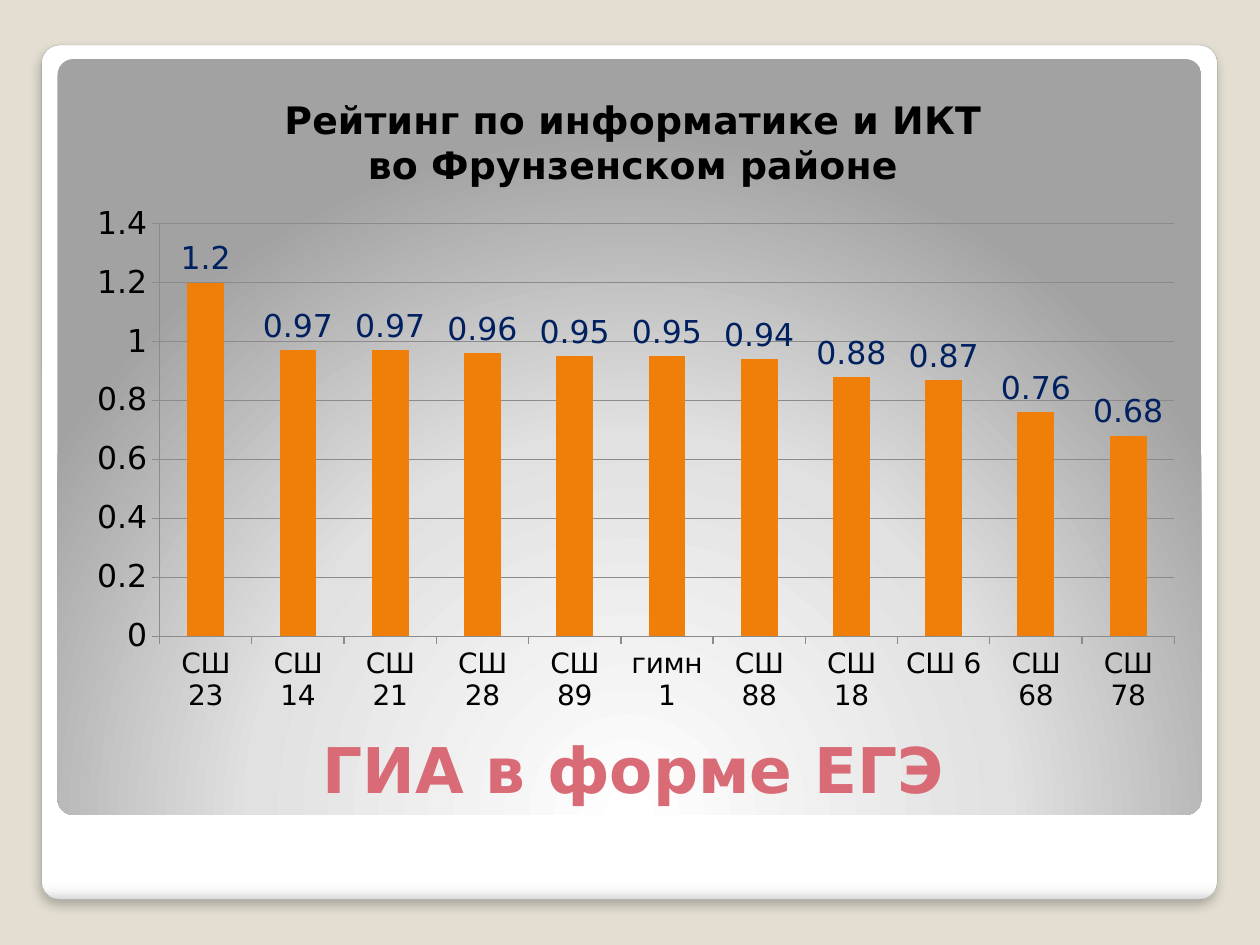
from lxml import etree
from pptx import Presentation
from pptx.chart.data import CategoryChartData
from pptx.dml.color import RGBColor
from pptx.enum.chart import XL_CHART_TYPE, XL_LABEL_POSITION, XL_TICK_MARK
from pptx.enum.shapes import MSO_SHAPE
from pptx.enum.text import MSO_ANCHOR, PP_ALIGN
from pptx.oxml import parse_xml
from pptx.oxml.ns import nsdecls
from pptx.util import Cm, Pt

FONT = "DejaVu Sans"
BEIGE = RGBColor(0xE3, 0xDE, 0xD1)
WHITE = RGBColor(0xFF, 0xFF, 0xFF)
PALE = RGBColor(0xF7, 0xF7, 0xF7)
EDGE = RGBColor(0xDA, 0xDA, 0xDA)
SILVER = RGBColor(0xE1, 0xE1, 0xE1)
GREY = RGBColor(0xA2, 0xA2, 0xA2)
OUTLINE = RGBColor(0xA4, 0xA4, 0xA4)
AXIS = RGBColor(0x8B, 0x8B, 0x8B)
BLACK = RGBColor(0, 0, 0)
NAVY = RGBColor(0x00, 0x20, 0x60)
ORANGE = RGBColor(0xF0, 0x7F, 0x09)
ROSE = RGBColor(0xD9, 0x6B, 0x77)

RATING = {
    "СШ 23": 1.2, "СШ 14": 0.97, "СШ 21": 0.97, "СШ 28": 0.96,
    "СШ 89": 0.95, "гимн 1": 0.95, "СШ 88": 0.94, "СШ 18": 0.88,
    "СШ 6": 0.87, "СШ 68": 0.76, "СШ 78": 0.68,
}
LINEAR = '<a:lin ang="5400000" scaled="0"/>'
RADIAL = ('<a:path path="circle"><a:fillToRect l="50000" t="175000" '
          'r="50000" b="-75000"/></a:path>')


def add_panel(s, x, y, w, h, stops, direction):
    """Add a rounded panel with a gradient fill and no outline."""
    sp = s.shapes.add_shape(MSO_SHAPE.ROUNDED_RECTANGLE, Cm(x), Cm(y), Cm(w), Cm(h))
    sp.adjustments[0] = 0.021
    sp.shadow.inherit = False
    sp.line.fill.background()
    marks = "".join(f'<a:gs pos="{pos * 1000}"><a:srgbClr val="{color}"/></a:gs>'
                    for pos, color in stops)
    gradient = parse_xml(f'<a:gradFill {nsdecls("a")} rotWithShape="1">'
                         f'<a:gsLst>{marks}</a:gsLst>{direction}</a:gradFill>')
    sp._element.spPr.find("{*}prstGeom").addnext(gradient)
    return sp


def add_frame(s, x, y, w, h):
    """Add the white card with its shadow and the grey panel on it."""
    card = add_panel(s, x, y, w, h,
                     [(0, WHITE), (98, WHITE), (99, PALE), (100, EDGE)], LINEAR)
    card.line.color.rgb = OUTLINE
    card.line.width = Pt(0.16)
    effects = card._element.spPr.find("{*}effectLst")
    effects.append(parse_xml(
        f'<a:outerShdw {nsdecls("a")} blurRad="{Pt(6)}" dist="{Pt(4)}" '
        'dir="5400000" algn="t" rotWithShape="0"><a:srgbClr val="000000">'
        '<a:alpha val="25000"/></a:srgbClr></a:outerShdw>'))
    add_panel(s, x + 0.32, y + 0.28, w - 0.64, 15.24,
              [(0, WHITE), (55, SILVER), (100, GREY)], RADIAL)


def add_heading(s, x, y, w, h):
    """Add the slide heading at the bottom of its box."""
    tf = s.shapes.add_textbox(Cm(x), Cm(y), Cm(w), Cm(h)).text_frame
    tf.word_wrap = True
    tf.vertical_anchor = MSO_ANCHOR.BOTTOM
    tf.margin_bottom = 0
    p = tf.paragraphs[0]
    p.alignment = PP_ALIGN.CENTER
    r = p.add_run()
    r.text = "ГИА в форме ЕГЭ"
    set_font(r.font, 36, ROSE, True)


def set_font(font, size, color, bold=False):
    """Apply the slide typeface with a size, colour and weight."""
    font.name = FONT
    font.size = Pt(size)
    font.bold = bold
    font.color.rgb = color


def set_plot_area(chart, **layout):
    """Fix the inner plot area as fractions of the chart."""
    plot_area = chart._chartSpace.chart.plotArea
    for old in plot_area.findall("{*}layout"):
        plot_area.remove(old)
    node = parse_xml(f'<c:layout {nsdecls("c")}><c:manualLayout>'
                     '<c:layoutTarget val="inner"/><c:xMode val="edge"/>'
                     '<c:yMode val="edge"/></c:manualLayout></c:layout>')
    for key, value in layout.items():
        etree.SubElement(node[0], node.tag.replace("layout", key), val=str(value))
    plot_area.insert(0, node)


def add_rating_chart(s, x, y, w, h):
    """Add the column chart of school ratings."""
    data = CategoryChartData()
    data.categories = list(RATING)
    data.add_series("Series 1", list(RATING.values()))
    chart = s.shapes.add_chart(XL_CHART_TYPE.COLUMN_CLUSTERED,
                               Cm(x), Cm(y), Cm(w), Cm(h), data).chart
    set_font(chart.font, 18, BLACK)
    chart.has_legend = False
    tf = chart.chart_title.text_frame
    for i, text in enumerate(["Рейтинг по информатике и ИКТ", "во Фрунзенском районе"]):
        p = tf.add_paragraph() if i else tf.paragraphs[0]
        r = p.add_run()
        r.text = text
        set_font(r.font, 21.6, BLACK, True)
    chart.chart_title.include_in_layout = False
    for axis, size in ((chart.category_axis, 16), (chart.value_axis, 18)):
        set_font(axis.tick_labels.font, size, BLACK)
        axis.major_tick_mark = XL_TICK_MARK.OUTSIDE
        axis.minor_tick_mark = XL_TICK_MARK.NONE
        axis.format.line.color.rgb = AXIS
    axis = chart.value_axis
    axis.minimum_scale, axis.maximum_scale, axis.major_unit = 0, 1.4, 0.2
    axis.major_gridlines.format.line.color.rgb = AXIS
    plot = chart.plots[0]
    plot.gap_width = 150
    plot.vary_by_categories = False
    series = plot.series[0]
    series.format.fill.solid()
    series.format.fill.fore_color.rgb = ORANGE
    labels = series.data_labels
    labels.show_value = True
    labels.position = XL_LABEL_POSITION.OUTSIDE_END
    set_font(labels.font, 18, NAVY)
    set_plot_area(chart, x=0.08, y=0.23, w=0.9, h=0.63)


def main():
    """Build the slide and save it."""
    prs = Presentation()
    prs.slide_width, prs.slide_height = Cm(25.4), Cm(19.05)
    s = prs.slides.add_slide(prs.slide_layouts[6])
    s.background.fill.solid()
    s.background.fill.fore_color.rgb = BEIGE
    add_frame(s, 0.84, 0.91, 23.7, 17.22)
    add_heading(s, 1.4, 13.28, 22.73, 2.97)
    add_rating_chart(s, 1.4, 1.47, 22.73, 13.21)
    prs.save("out.pptx")


if __name__ == "__main__":
    main()
